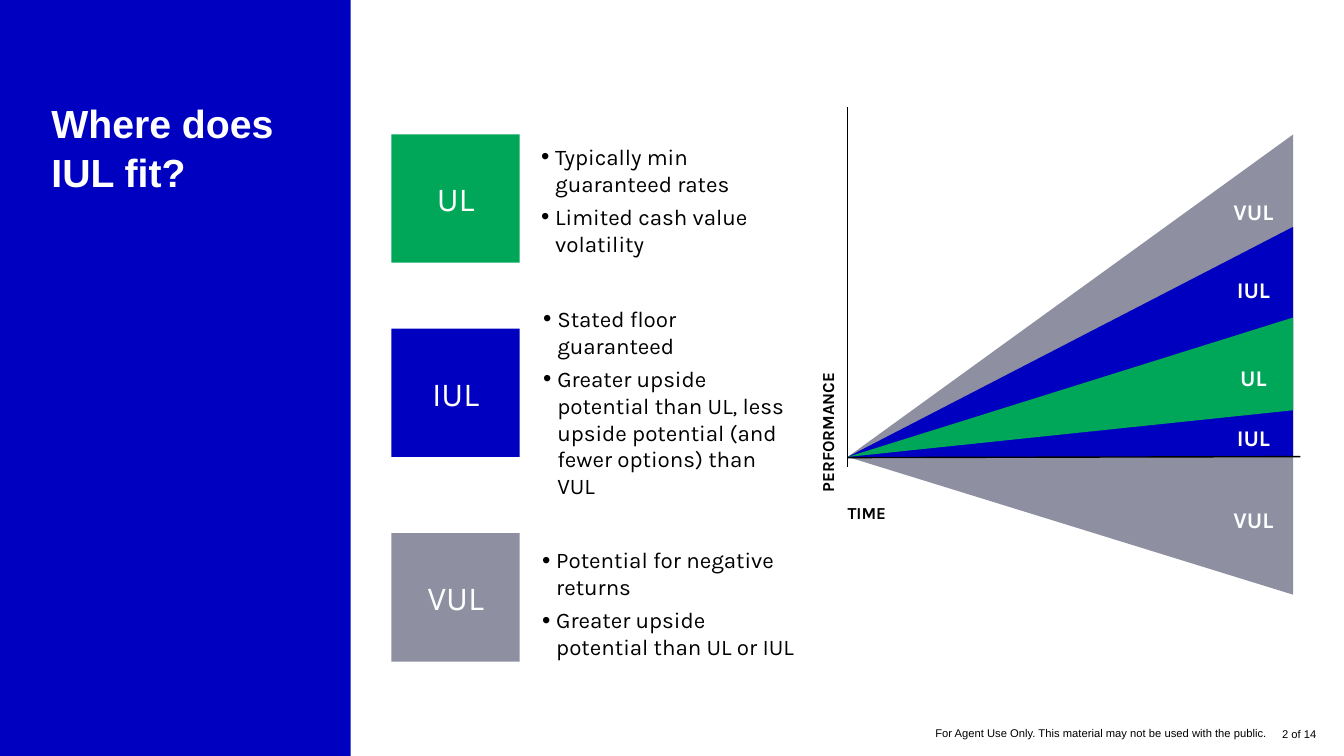
"""Build a slide comparing UL, IUL and VUL on a grid of 40 columns by 22.5 rows."""
from dataclasses import dataclass

import lxml.etree
import pptx
import pptx.dml.color
import pptx.enum.shapes
import pptx.enum.text
import pptx.oxml.ns
import pptx.util

COLUMNS, ROWS = 40, 22.5
WIDTH, HEIGHT = pptx.util.Inches(13.33), pptx.util.Inches(7.5)
BLUE, GREEN, GRAY = "0000C1", "00A758", "8E90A2"
WHITE, OFF_WHITE, BLACK = "FFFFFF", "FEFFFD", "000000"
ALIGN, ANCHOR = pptx.enum.text.PP_ALIGN, pptx.enum.text.MSO_ANCHOR
SQUARE_LEFT, SQUARE_SIZE = 11.65, 3.82
ORIGIN_COLUMN, ORIGIN_ROW, FAN_RIGHT = 25.23, 13.6, 38.49
INDENT = pptx.util.Inches(0.14)


@dataclass(frozen=True)
class Box:
    left: float
    top: float
    width: float
    height: float


@dataclass(frozen=True)
class Style:
    size: float
    color: str = BLACK
    bold: bool = False
    font: str = "Karla"
    align: ALIGN = ALIGN.LEFT


@dataclass(frozen=True)
class Product:
    name: str
    color: str
    top: float
    features_box: Box
    features: tuple[str, ...]


@dataclass(frozen=True)
class Wedge:
    color: str
    upper: float
    lower: float


@dataclass(frozen=True)
class Caption:
    text: str
    box: Box
    style: Style
    rotation: float = 0
    inset: bool = True


@dataclass(frozen=True)
class Axis:
    start: tuple[float, float]
    end: tuple[float, float]


FEATURE_STYLE = Style(16)
SQUARE_STYLE = Style(24, OFF_WHITE, align=ALIGN.CENTER)
WEDGE_STYLE = Style(16, WHITE, bold=True, align=ALIGN.CENTER)
TITLE_STYLE = Style(28, WHITE, bold=True, font="Arial")
FOOTER_STYLE = Style(8, font="Arial", align=ALIGN.RIGHT)

PRODUCTS = (
    Product("UL", GREEN, 4, Box(15.81, 4.08, 7.74, 3.75),
            ("Typically min guaranteed rates", "Limited cash value volatility")),
    Product("IUL", BLUE, 9.78, Box(15.87, 8.88, 7.86, 6.18),
            ("Stated floor guaranteed",
             "Greater upside potential than UL, less upside potential "
             "(and fewer options) than VUL")),
    Product("VUL", GRAY, 15.87, Box(15.84, 16.08, 8.31, 3.75),
            ("Potential for negative returns", "Greater upside potential than UL or IUL")),
)
WEDGES = (Wedge(GRAY, 4, 17.7), Wedge(BLUE, 6.75, ORIGIN_ROW), Wedge(GREEN, 9.45, 12.21))
WEDGE_LABELS = (("VUL", 5.76), ("IUL", 8.07), ("UL", 10.68), ("IUL", 12.48), ("VUL", 14.91))
AXES = (
    Axis((ORIGIN_COLUMN, 13.62), (38.7, 13.59)),
    Axis((ORIGIN_COLUMN, 13.89), (ORIGIN_COLUMN, 3.18)),
)
CAPTIONS = (
    *(Caption(name, Box(35.88, top, 2.85, 1.11), WEDGE_STYLE) for name, top in WEDGE_LABELS),
    Caption("TIME", Box(24.93, 14.82, 13.26, 0.9), Style(12, bold=True)),
    Caption("PERFORMANCE", Box(22.2, 12.42, 4.86, 0.9),
            Style(12, bold=True, align=ALIGN.CENTER), rotation=270),
    Caption("For Agent Use Only. This material may not be used with the public.",
            Box(18.03, 21.48, 19.98, 0.72), FOOTER_STYLE),
    Caption("2 of 14", Box(37.65, 21.48, 1.53, 0.57), FOOTER_STYLE, inset=False),
)


def across(columns: float) -> int:
    return round(WIDTH * columns / COLUMNS)


def down(rows: float) -> int:
    return round(HEIGHT * rows / ROWS)


def frame(box: Box) -> tuple[int, int, int, int]:
    return across(box.left), down(box.top), across(box.width), down(box.height)


def rgb(color: str) -> pptx.dml.color.RGBColor:
    return pptx.dml.color.RGBColor.from_string(color)


def paint(shape, color: str) -> None:
    shape.shadow.inherit = False
    shape.fill.solid()
    shape.fill.fore_color.rgb = rgb(color)
    shape.line.fill.background()


def add_rectangle(slide, box: Box, color: str):
    shape = slide.shapes.add_shape(pptx.enum.shapes.MSO_SHAPE.RECTANGLE, *frame(box))
    paint(shape, color)
    return shape


def add_bullet(paragraph) -> None:
    properties = paragraph._p.get_or_add_pPr()
    properties.set("marL", str(INDENT))
    properties.set("indent", str(-INDENT))
    qualify = pptx.oxml.ns.qn
    bullet_color = lxml.etree.SubElement(properties, qualify("a:buClr"))
    lxml.etree.SubElement(bullet_color, qualify("a:srgbClr"), val=BLACK)
    lxml.etree.SubElement(properties, qualify("a:buSzPct"), val="106000")
    lxml.etree.SubElement(properties, qualify("a:buFont"), typeface="Arial")
    lxml.etree.SubElement(properties, qualify("a:buChar"), char="•")
    paragraph.space_after = pptx.util.Pt(4.5)


def write(shape, lines: tuple[str, ...], style: Style, anchor: ANCHOR = ANCHOR.TOP,
          bulleted: bool = False, inset: bool = True) -> None:
    text_frame = shape.text_frame
    text_frame.word_wrap = True
    text_frame.auto_size = pptx.enum.text.MSO_AUTO_SIZE.NONE
    text_frame.vertical_anchor = anchor
    if not inset:
        text_frame.margin_left = text_frame.margin_right = 0
        text_frame.margin_top = text_frame.margin_bottom = 0
    for index, line in enumerate(lines):
        paragraph = text_frame.add_paragraph() if index else text_frame.paragraphs[0]
        if bulleted:
            add_bullet(paragraph)
        paragraph.alignment = style.align
        run = paragraph.add_run()
        run.text = line
        run.font.name = style.font
        run.font.size = pptx.util.Pt(style.size)
        run.font.bold = style.bold
        run.font.color.rgb = rgb(style.color)


def add_product(slide, product: Product) -> None:
    square = add_rectangle(
        slide, Box(SQUARE_LEFT, product.top, SQUARE_SIZE, SQUARE_SIZE), product.color)
    write(square, (product.name,), SQUARE_STYLE, ANCHOR.MIDDLE)
    features = slide.shapes.add_textbox(*frame(product.features_box))
    write(features, product.features, FEATURE_STYLE, ANCHOR.MIDDLE, bulleted=True)


def add_wedge(slide, wedge: Wedge) -> None:
    builder = slide.shapes.build_freeform(across(ORIGIN_COLUMN), down(ORIGIN_ROW))
    right = across(FAN_RIGHT)
    builder.add_line_segments([(right, down(wedge.upper)), (right, down(wedge.lower))])
    paint(builder.convert_to_shape(), wedge.color)


def add_axis(slide, axis: Axis) -> None:
    connector = slide.shapes.add_connector(
        pptx.enum.shapes.MSO_CONNECTOR.STRAIGHT,
        across(axis.start[0]), down(axis.start[1]), across(axis.end[0]), down(axis.end[1]))
    connector.line.color.rgb = rgb(BLACK)
    connector.line.width = pptx.util.Pt(1)
    lxml.etree.SubElement(connector._element.spPr, pptx.oxml.ns.qn("a:effectLst"))


def add_caption(slide, caption: Caption) -> None:
    shape = slide.shapes.add_textbox(*frame(caption.box))
    shape.rotation = caption.rotation
    anchor = ANCHOR.TOP if caption.inset else ANCHOR.BOTTOM
    write(shape, (caption.text,), caption.style, anchor, inset=caption.inset)


def place_title(slide) -> None:
    title = slide.shapes.title
    title.left, title.top, title.width, title.height = frame(Box(1.53, 2.88, 7.26, 6.93))
    write(title, ("Where does IUL fit?",), TITLE_STYLE, inset=False)
    title.text_frame.paragraphs[0].line_spacing = 1.05
    slide.shapes._spTree.append(title._element)


def main() -> None:
    presentation = pptx.Presentation()
    presentation.slide_width, presentation.slide_height = WIDTH, HEIGHT
    slide = presentation.slides.add_slide(presentation.slide_layouts.get_by_name("Title Only"))
    add_rectangle(slide, Box(0, 0, 10.44, ROWS), BLUE)
    for draw, items in ((add_product, PRODUCTS), (add_wedge, WEDGES),
                        (add_axis, AXES), (add_caption, CAPTIONS)):
        for item in items:
            draw(slide, item)
    place_title(slide)
    presentation.save("out.pptx")


if __name__ == "__main__":
    main()
